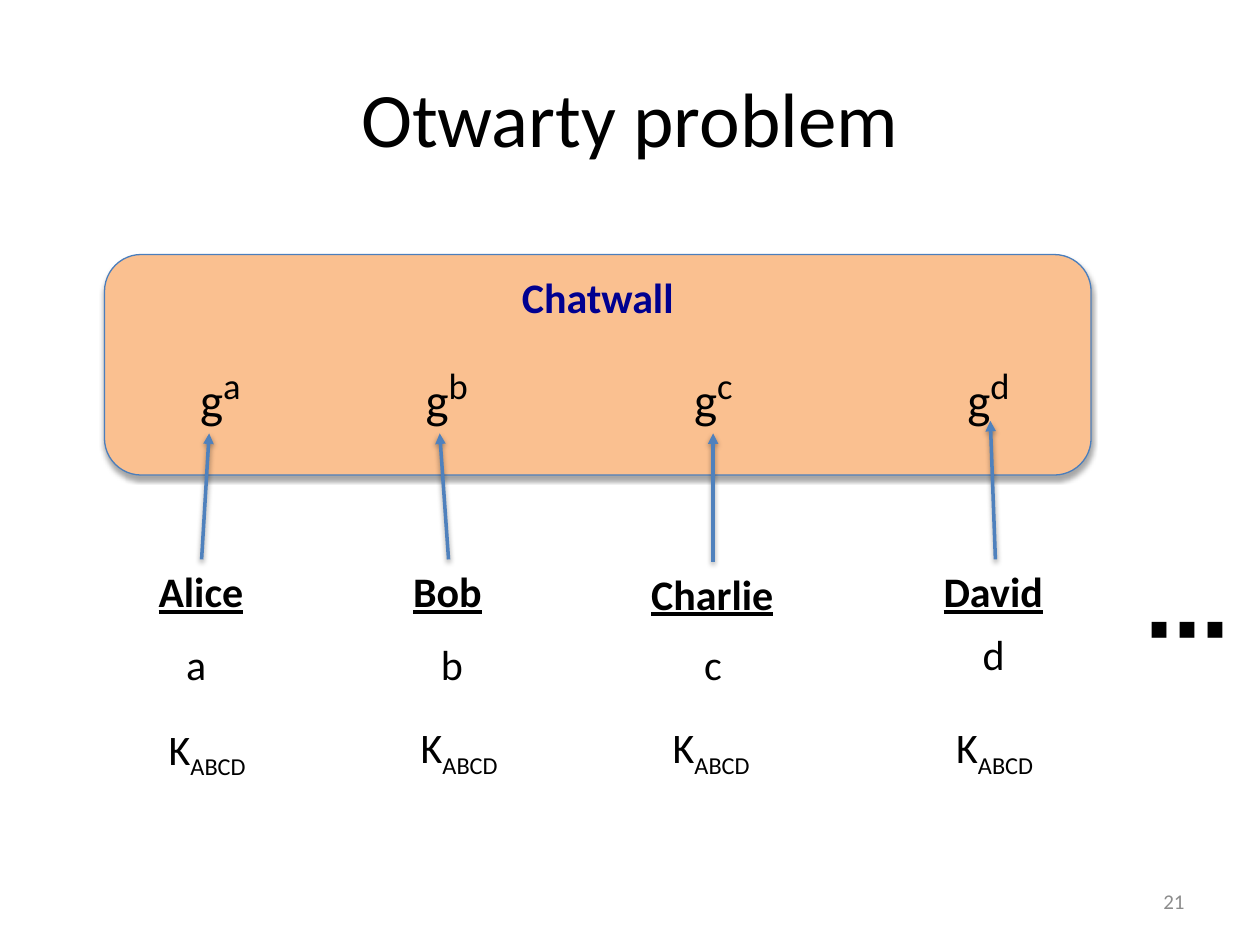
import pptx
import pptx.util
import pptx.dml.color
import pptx.enum.shapes
import pptx.enum.text
import pptx.oxml
import pptx.oxml.ns

FONT = "Calibri"
BLACK = "000000"
CELL = 0.1  # the 10 by 7.5 inch slide is a grid of 100 columns and 75 rows
ALIGN = pptx.enum.text.PP_ALIGN
ANCHOR = pptx.enum.text.MSO_ANCHOR
qn = pptx.oxml.ns.qn

# name, letter, then (column, row) of name, letter, power and key,
# then the ends of the arrow
PEOPLE = [
    ("Alice", "a", (11.6, 44.4), (13.8, 50.2), (14.9, 27.7), (12.4, 56.9),
     (16, 44.4), (16.6, 34.4)),
    ("Bob", "b", (31.8, 44.4), (34, 50.2), (32.8, 27.7), (32.4, 56.8),
     (35.6, 44.4), (34.9, 34.4)),
    ("Charlie", "c", (50.7, 44.6), (54.9, 50.2), (54.1, 27.7), (52.4, 56.8),
     (56.6, 44.6), (56.6, 34.4)),
    ("David", "d", (73.9, 44.4), (77, 49.4), (75.8, 27.7), (74.9, 56.8),
     (79, 44.4), (78.6, 33.4)),
]
WIDTHS = {"Alice": 8.8, "Bob": 7.5, "Charlie": 11.8, "David": 10,
          "a": 3.6, "b": 3.8, "c": 3.4, "d": 3.8}


def grid(*cells):
    return [pptx.util.Inches(n * CELL) for n in cells]


def color(code):
    return pptx.dml.color.RGBColor.from_string(code)


def style(run, size, code=BLACK, bold=False, under=False, base=0):
    """Format a run; base is its rise in percent."""
    font = run.font
    font.name = FONT
    font.size = pptx.util.Pt(size)
    font.color.rgb = color(code)
    font.bold = bold
    font.underline = under
    if base:
        run._r.get_or_add_rPr().set("baseline", str(base * 1000))


def label(slide, text, spot, size, **look):
    """Add a text box that hugs its single line."""
    box = slide.shapes.add_textbox(*grid(*spot))
    frame = box.text_frame
    frame.text = text
    frame.word_wrap = False
    frame.auto_size = pptx.enum.text.MSO_AUTO_SIZE.SHAPE_TO_FIT_TEXT
    style(frame.paragraphs[0].runs[0], size, **look)
    return frame.paragraphs[0]


def raised(slide, text, spot, size, tail, small, base):
    """Add a label followed by a superscript or subscript."""
    run = label(slide, text, spot, size).add_run()
    run.text = tail
    style(run, small, base=base)


def block(slide, text, spot, size, align, code=BLACK):
    """Add a wrapped text box centred from top to bottom."""
    frame = slide.shapes.add_textbox(*grid(*spot)).text_frame
    frame.text = text
    frame.word_wrap = True
    frame.vertical_anchor = ANCHOR.MIDDLE
    line = frame.paragraphs[0]
    line.alignment = align
    style(line.runs[0], size, code)


def shade(props, alpha, dist):
    """Put a soft shadow straight below a shape or line."""
    old = props.find(qn("a:effectLst"))
    if old is not None:
        props.remove(old)
    props.append(pptx.oxml.parse_xml(
        f'<a:effectLst {pptx.oxml.ns.nsdecls("a")}>'
        f'<a:outerShdw blurRad="{pptx.util.Pt(3.1)}" dist="{pptx.util.Pt(dist)}" '
        'dir="5400000" rotWithShape="0"><a:srgbClr val="000000">'
        f'<a:alpha val="{alpha * 1000}"/></a:srgbClr></a:outerShdw></a:effectLst>'))


def panel(slide, text, spot):
    kind = pptx.enum.shapes.MSO_SHAPE.ROUNDED_RECTANGLE
    shape = slide.shapes.add_shape(kind, *grid(*spot))
    shape.fill.solid()
    shape.fill.fore_color.rgb = color("FAC090")
    shape.line.color.rgb = color("4B7EBC")
    shape.line.width = pptx.util.Pt(0.75)
    shade(shape._element.spPr, 35, 1.8)
    frame = shape.text_frame
    frame.text = text
    frame.vertical_anchor = ANCHOR.TOP
    frame.paragraphs[0].alignment = ALIGN.CENTER
    style(frame.paragraphs[0].runs[0], 24, "000090", bold=True)


def arrow(slide, start, end):
    kind = pptx.enum.shapes.MSO_CONNECTOR.STRAIGHT
    link = slide.shapes.add_connector(kind, *grid(*start, *end))
    link.line.color.rgb = color("4F81BD")
    link.line.width = pptx.util.Pt(2)
    props = link._element.spPr
    head = pptx.oxml.parse_xml(
        f'<a:tailEnd {pptx.oxml.ns.nsdecls("a")} type="triangle"/>')
    props.find(qn("a:ln")).append(head)
    shade(props, 38, 1.6)


def person(slide, name, letter, top, mid, power, key, start, end):
    label(slide, name, (*top, WIDTHS[name], 5), 24, bold=True, under=True)
    label(slide, letter, (*mid, WIDTHS[letter], 5), 24)
    raised(slide, "g", (*power, 5.5, 5.7), 28, letter, 36, 30)
    arrow(slide, start, end)
    raised(slide, "K", (*key, 8.9, 5), 24, "ABCD", 24, -25)


def main():
    deck = pptx.Presentation()
    deck.slide_width, deck.slide_height = grid(100, 75)
    slide = deck.slides.add_slide(deck.slide_layouts[6])
    block(slide, "Otwarty problem", (5, 3, 90, 12.5), 44, ALIGN.CENTER)
    block(slide, "21", (71.7, 69.5, 23.3, 4), 12, ALIGN.RIGHT, "8C8C8C")
    panel(slide, "Chatwall", (8.3, 20.2, 78.3, 17.5))
    for row in PEOPLE:
        person(slide, *row)
    label(slide, "⋯", (89.9, 45.2, 5.4, 9.1), 48, bold=True)
    deck.save("out.pptx")


if __name__ == "__main__":
    main()
